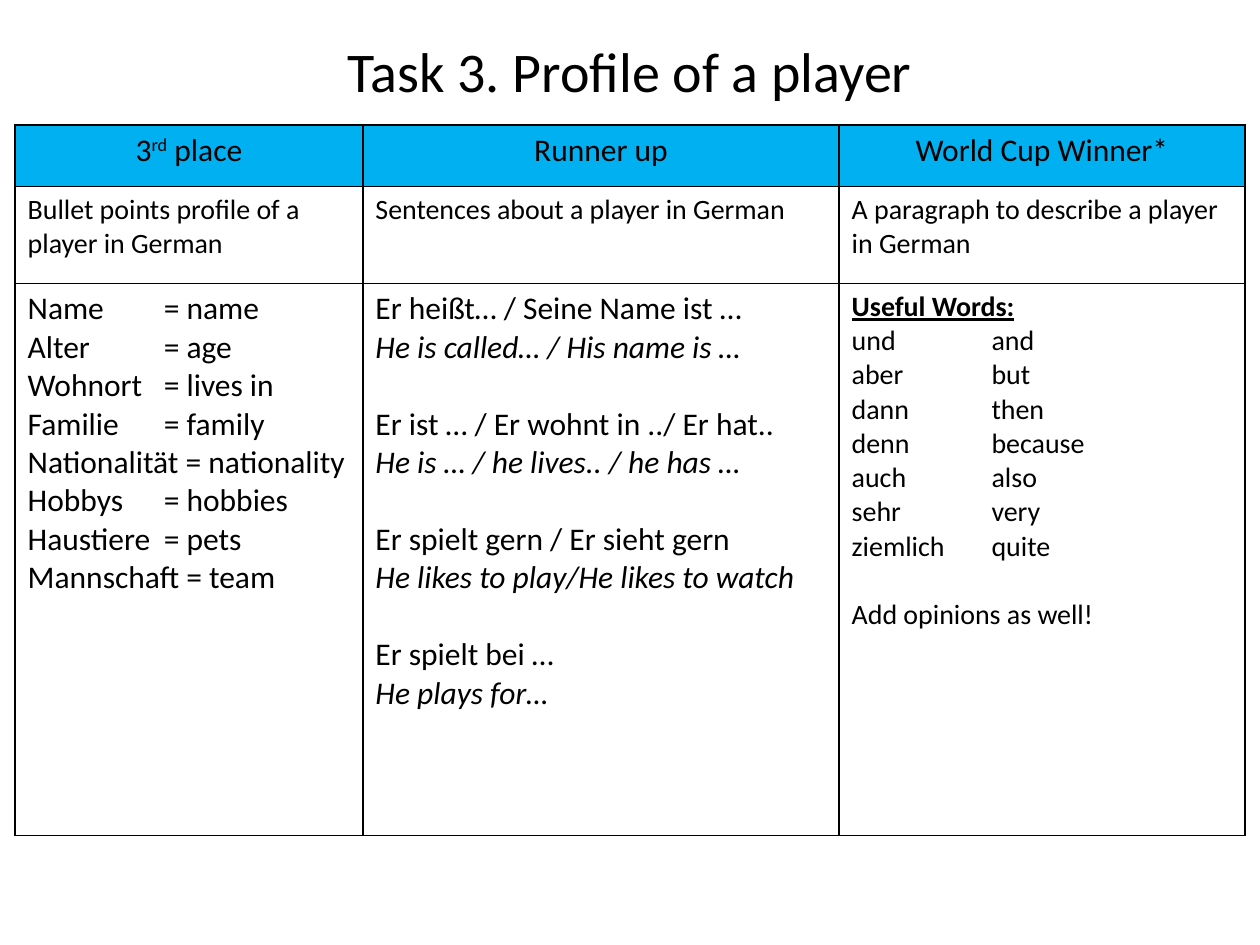
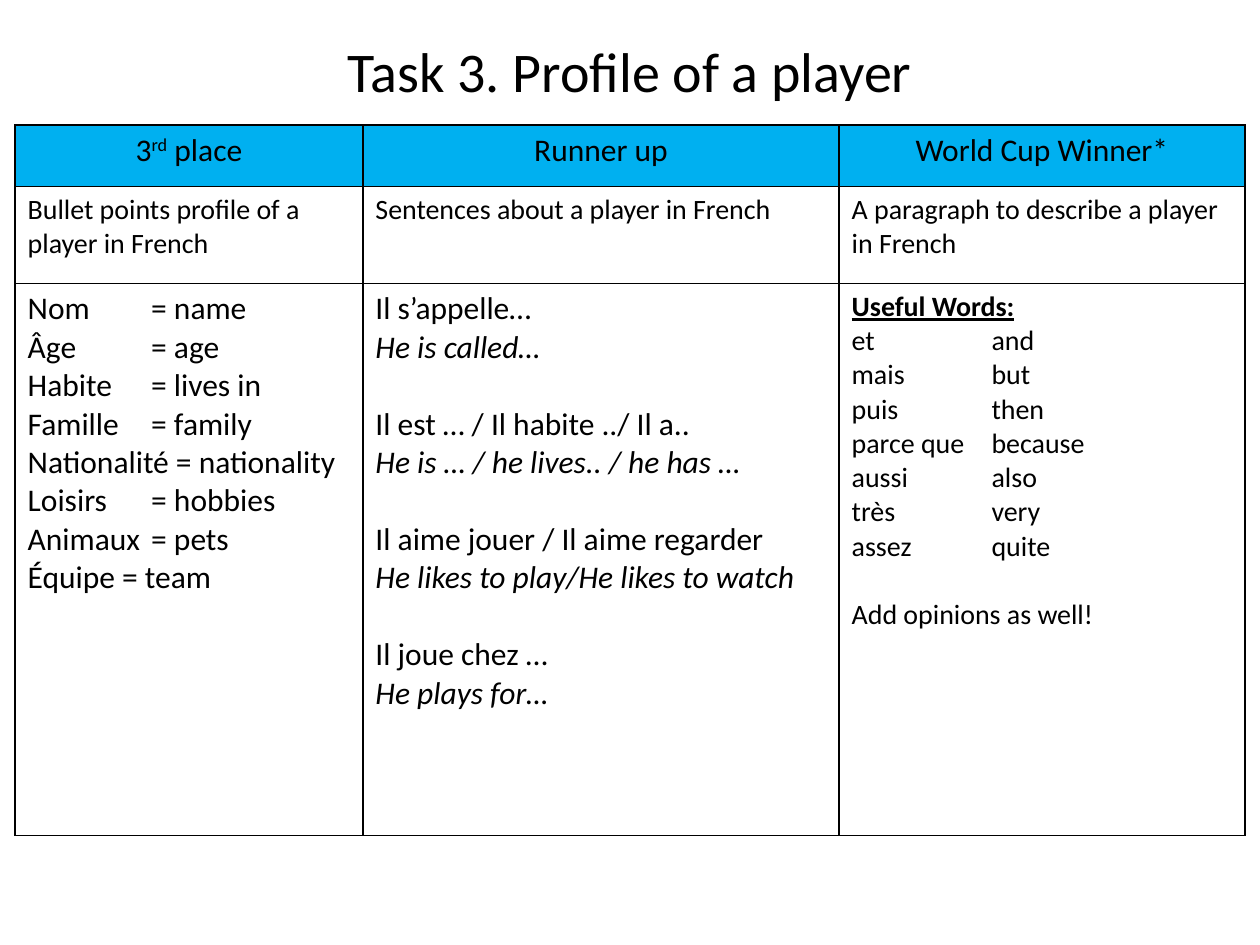
from lxml.etree import SubElement
from pptx import Presentation
from pptx.dml.color import RGBColor
from pptx.enum.text import MSO_ANCHOR, PP_ALIGN
from pptx.oxml.ns import qn
from pptx.util import Inches, Pt

BLACK = RGBColor(0x00, 0x00, 0x00)
HEADER_BLUE = RGBColor(0x00, 0xB0, 0xF0)
FONT = "Calibri"
TITLE = "Task 3. Profile of a player"
HEADINGS = ["3rd place", "Runner up", "World Cup Winner*"]
TASKS = [
    "Bullet points profile of a player in",
    "Sentences about a player in",
    "A paragraph to describe a player in",
]
COLUMN_WIDTHS = [2.76, 3.78, 3.22]
ROW_HEIGHTS = [0.49, 0.77, 4.38]
WORDS_TAB = 1.11

LANGUAGES = [
    {
        "name": "German",
        "profile_tab": 1.08,
        "profile": [
            "Name\t= name", "Alter\t= age", "Wohnort\t= lives in",
            "Familie\t= family", "Nationalität = nationality",
            "Hobbys\t= hobbies", "Haustiere\t= pets", "Mannschaft = team",
        ],
        "sentences": [
            ("Er heißt… / Seine Name ist …", "He is called… / His name is …"),
            ("Er ist … / Er wohnt in ../ Er hat..", "He is … / he lives.. / he has …"),
            ("Er spielt gern / Er sieht gern", "He likes to play/He likes to watch"),
            ("Er spielt bei …", "He plays for…"),
        ],
        "words": [
            "und\tand", "aber\tbut", "dann\tthen", "denn\tbecause",
            "auch\talso", "sehr\tvery", "ziemlich\tquite",
        ],
    },
    {
        "name": "French",
        "profile_tab": 0.98,
        "profile": [
            "Nom\t= name", "Âge\t= age", "Habite\t= lives in",
            "Famille\t= family", "Nationalité = nationality",
            "Loisirs\t= hobbies", "Animaux\t= pets", "Équipe = team",
        ],
        "sentences": [
            ("Il s’appelle…", "He is called…"),
            ("Il est … / Il habite ../ Il a..", "He is … / he lives.. / he has …"),
            ("Il aime jouer / Il aime regarder", "He likes to play/He likes to watch"),
            ("Il joue chez …", "He plays for…"),
        ],
        "words": [
            "et\tand", "mais\tbut", "puis\tthen", "parce que\tbecause",
            "aussi\talso", "très\tvery", "assez\tquite",
        ],
    },
]


def write_lines(frame, lines, size, align=PP_ALIGN.LEFT, tab=None):
    frame.text = "\n".join(lines)
    for para in frame.paragraphs:
        para.alignment = align
        for span in para.runs:
            span.font.name = FONT
            span.font.size = Pt(size)
            span.font.color.rgb = BLACK
        if "\t" in para.text:
            tabs = SubElement(para._p.get_or_add_pPr(), qn("a:tabLst"))
            SubElement(tabs, qn("a:tab"), pos=str(Inches(tab)), algn="l")


def add_borders(cell):
    properties = cell._tc.get_or_add_tcPr()
    for side in ("L", "R", "T", "B"):
        line = SubElement(properties, qn(f"a:ln{side}"), w=str(Pt(1)))
        fill = SubElement(line, qn("a:solidFill"))
        SubElement(fill, qn("a:srgbClr"), val=str(BLACK))


deck = Presentation()
deck.slide_width = Inches(10)
deck.slide_height = Inches(7.5)

for language in LANGUAGES:
    page = deck.slides.add_slide(deck.slide_layouts[6])

    title = page.shapes.add_textbox(Inches(0.5), Inches(0.29), Inches(9), Inches(0.54))
    title.text_frame.word_wrap = True
    title.text_frame.vertical_anchor = MSO_ANCHOR.MIDDLE
    write_lines(title.text_frame, [TITLE], 32, PP_ALIGN.CENTER)

    table = page.shapes.add_table(
        3, 3, Inches(0.12), Inches(0.99), Inches(9.76), Inches(5.64)
    ).table
    table.first_row = False
    table.horz_banding = False
    for column, width in zip(table.columns, COLUMN_WIDTHS):
        column.width = Inches(width)
    for row, height in zip(table.rows, ROW_HEIGHTS):
        row.height = Inches(height)
    for cell in table.iter_cells():
        add_borders(cell)
        cell.fill.background()

    for index, (heading, task) in enumerate(zip(HEADINGS, TASKS)):
        header = table.cell(0, index)
        header.fill.solid()
        header.fill.fore_color.rgb = HEADER_BLUE
        write_lines(header.text_frame, [heading], 18, PP_ALIGN.CENTER)
        write_lines(table.cell(1, index).text_frame, [f"{task} {language['name']}"], 16)

    place = table.cell(0, 0).text_frame
    place.paragraphs[0].clear()
    for part in ("3", "rd", " place"):
        span = place.paragraphs[0].add_run()
        span.text = part
        span.font.name = FONT
        span.font.size = Pt(18)
        span.font.color.rgb = BLACK
        if part == "rd":
            span.font._element.set("baseline", "30000")

    profile, sentences, words = [table.cell(2, index).text_frame for index in range(3)]
    write_lines(profile, language["profile"], 18, tab=language["profile_tab"])

    write_lines(sentences, [line for pair in language["sentences"] for line in pair], 18)
    for number, para in enumerate(sentences.paragraphs):
        if number % 2:
            para.runs[0].font.italic = True
        elif number:
            para.space_before = Pt(22)

    word_lines = ["Useful Words:", *language["words"], "Add opinions as well!"]
    write_lines(words, word_lines, 16, tab=WORDS_TAB)
    words.paragraphs[0].runs[0].font.bold = True
    words.paragraphs[0].runs[0].font.underline = True
    words.paragraphs[-1].space_before = Pt(19.5)

deck.save("out.pptx")
